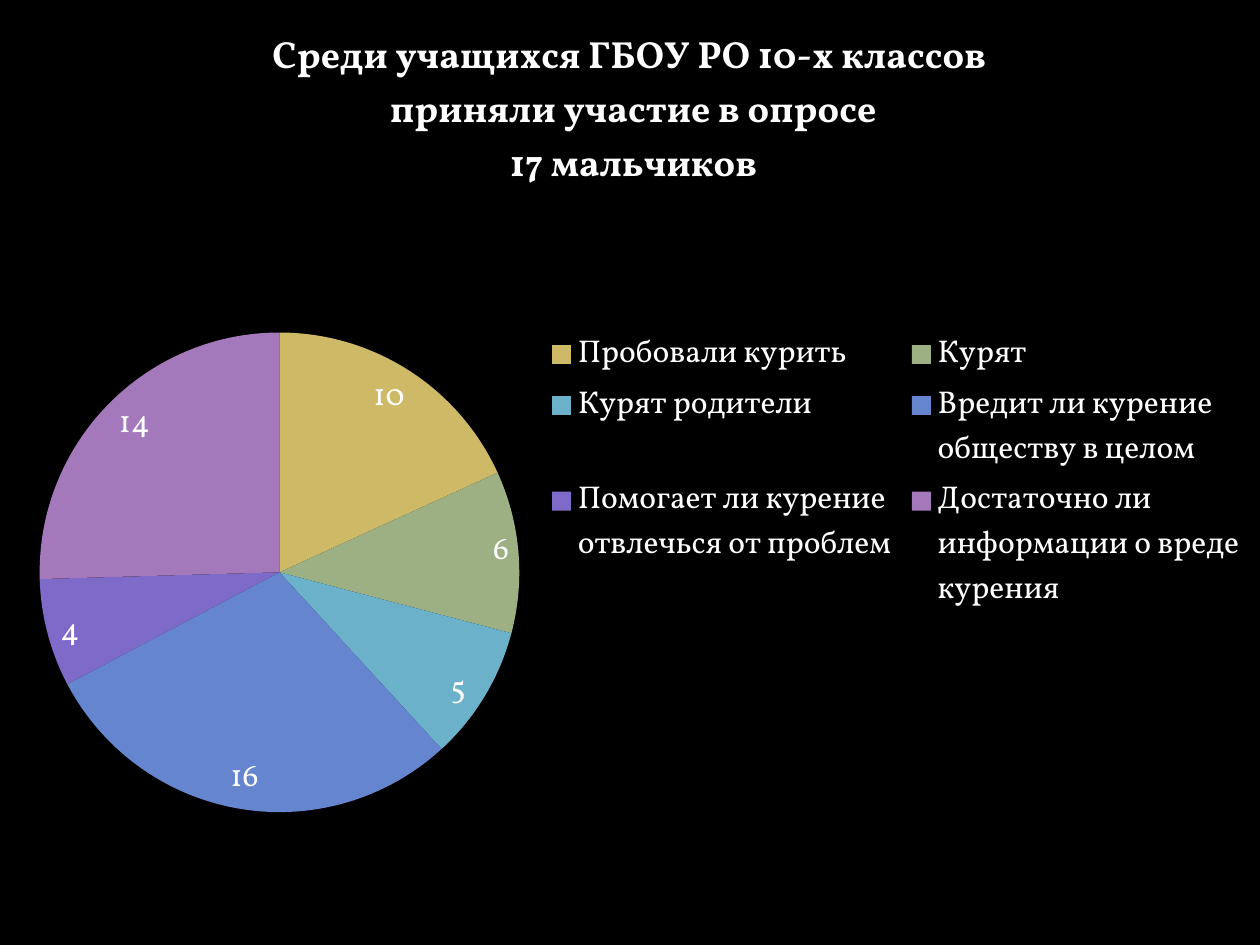
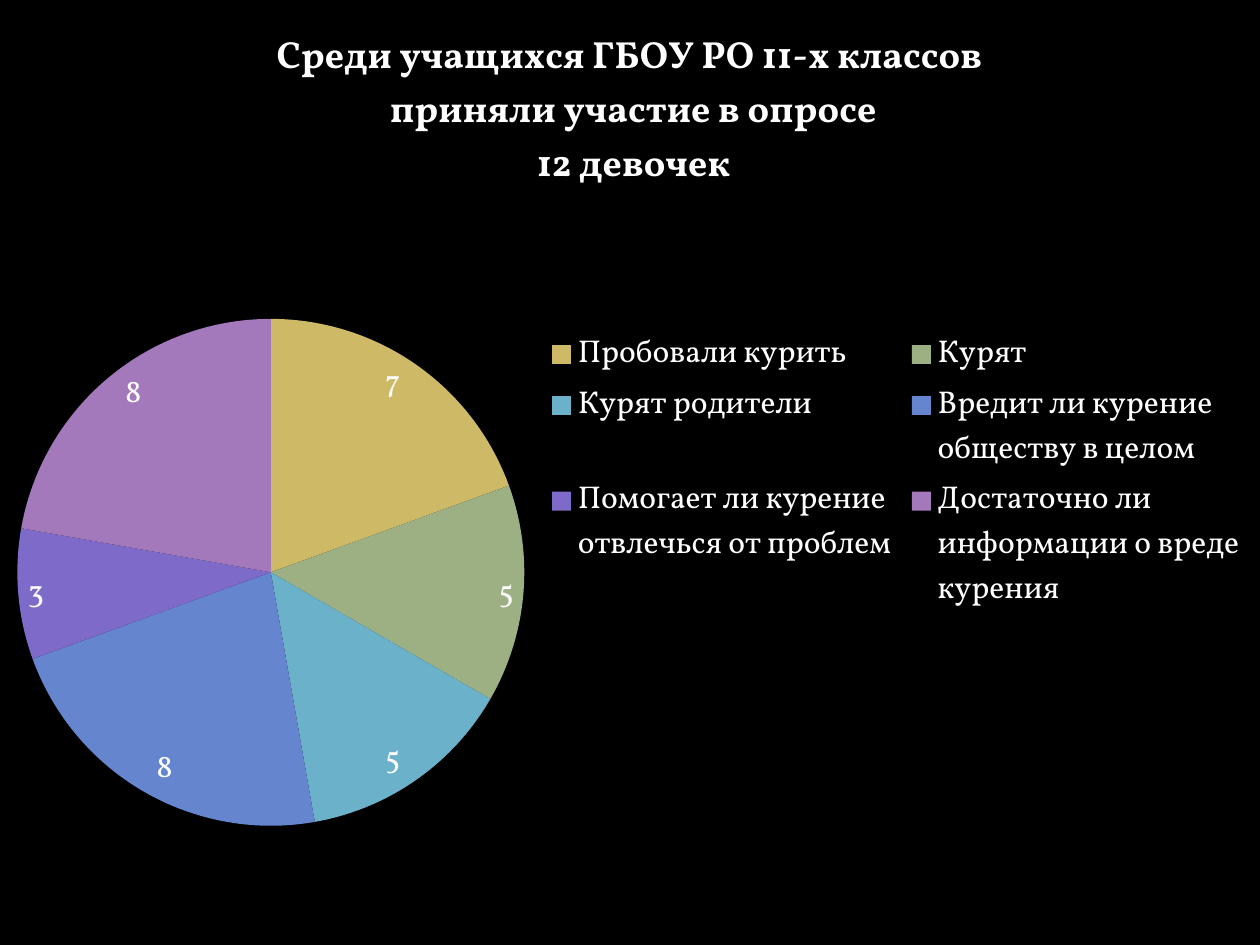
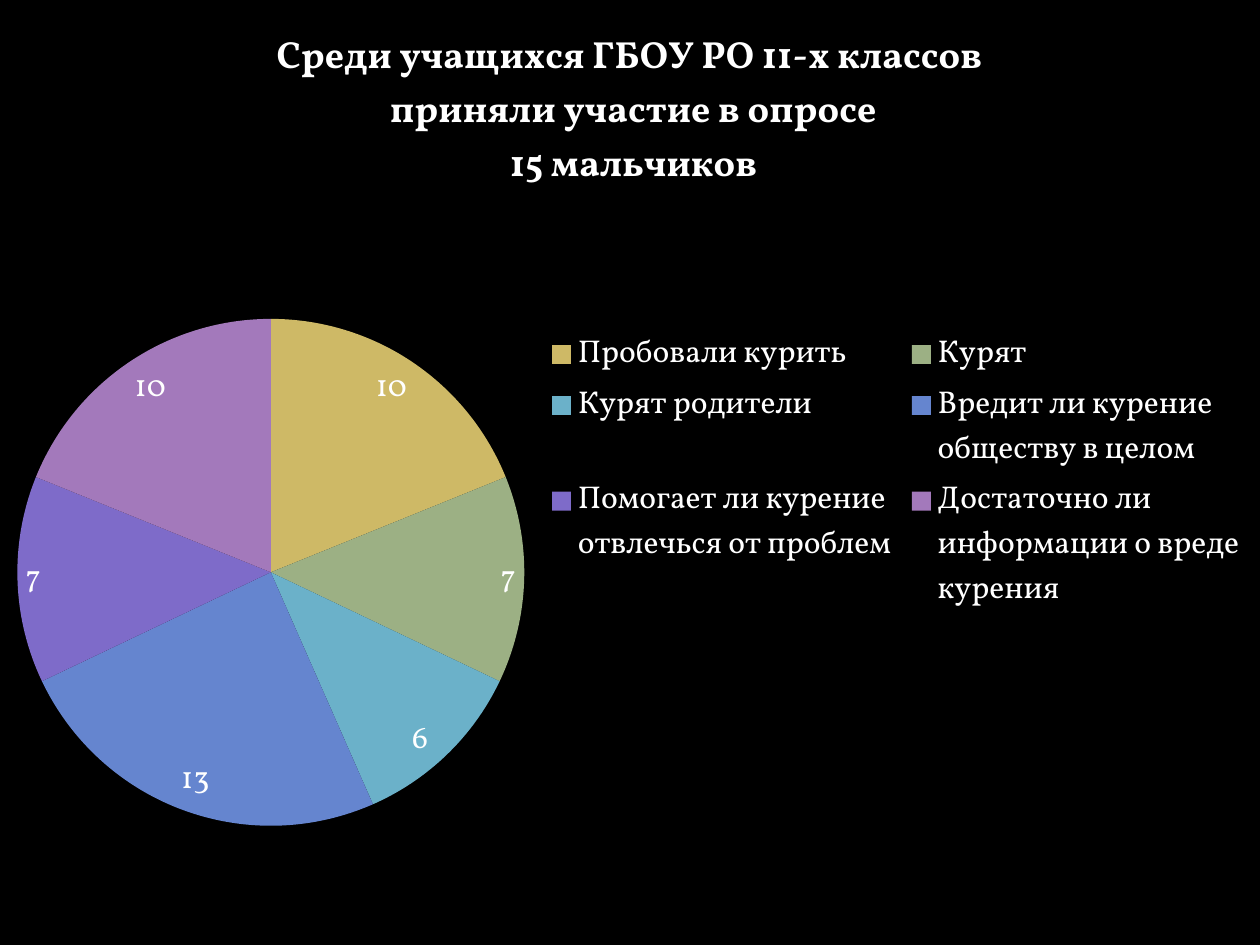
from dataclasses import dataclass

from pptx import Presentation
from pptx.chart.data import CategoryChartData
from pptx.dml.color import RGBColor
from pptx.enum.chart import XL_CHART_TYPE, XL_LABEL_POSITION, XL_LEGEND_POSITION
from pptx.util import Cm, Pt


@dataclass(frozen=True)
class Theme:
    """Colours, font and type sizes shared by the slides."""
    font: str = "Vollkorn"
    background: RGBColor = RGBColor.from_string("000000")
    text: RGBColor = RGBColor.from_string("FFFFFF")
    slices: tuple = ("CEB966", "9CB084", "6BB1C9", "6585CF", "7E6BC9", "A379BB")
    body_size: Pt = Pt(18)
    title_size: Pt = Pt(21.6)


@dataclass(frozen=True)
class Box:
    """A rectangle given by its left, top, width and height."""
    left: int
    top: int
    width: int
    height: int


@dataclass(frozen=True)
class Survey:
    """Answers of one group of pupils."""
    grade: str
    group: str
    answers: tuple


THEME = Theme()
SLIDE = Box(Cm(0), Cm(0), Cm(25.4), Cm(19.05))
QUESTIONS = (
    "Пробовали курить",
    "Курят",
    "Курят родители",
    "Вредит ли курение обществу в целом",
    "Помогает ли курение отвлечься от проблем",
    "Достаточно ли информации о вреде курения",
)
SURVEYS = (
    Survey("10-х", "17 мальчиков", (10, 6, 5, 16, 4, 14)),
    Survey("11-х", "12 девочек", (7, 5, 5, 8, 3, 8)),
    Survey("11-х", "15 мальчиков", (10, 7, 6, 13, 7, 10)),
)


def style_font(font, size, bold=False):
    """Apply the theme's typeface and text colour."""
    font.name = THEME.font
    font.size = size
    font.bold = bold
    font.color.rgb = THEME.text


def add_heading(chart, survey):
    """Write the three centred lines of the chart title."""
    lines = (
        f"Среди учащихся ГБОУ РО {survey.grade} классов",
        " приняли участие в опросе",
        f" {survey.group}",
    )
    tf = chart.chart_title.text_frame
    for i, line in enumerate(lines):
        p = tf.add_paragraph() if i else tf.paragraphs[0]
        p.add_run().text = line
        style_font(p.font, THEME.title_size, bold=True)
    chart.chart_title.include_in_layout = False


def style_pie(chart):
    """Colour the slices and show their values."""
    plot = chart.plots[0]
    plot.vary_by_categories = True
    for i, colour in enumerate(THEME.slices):
        fmt = plot.series[0].points[i].format
        fmt.fill.solid()
        fmt.fill.fore_color.rgb = RGBColor.from_string(colour)
        fmt.line.fill.background()
    plot.has_data_labels = True
    labels = plot.data_labels
    labels.show_value = True
    labels.show_percentage = False
    labels.position = XL_LABEL_POSITION.BEST_FIT
    style_font(labels.font, THEME.body_size)


def add_legend(chart):
    """Show the legend on the right of the pie."""
    chart.has_legend = True
    chart.legend.position = XL_LEGEND_POSITION.RIGHT
    chart.legend.include_in_layout = False
    style_font(chart.legend.font, THEME.body_size)


def add_survey_chart(slide, survey, box):
    """Fill the box with the pie chart of one survey."""
    data = CategoryChartData()
    data.categories = QUESTIONS
    data.add_series("Series 1", survey.answers)
    chart = slide.shapes.add_chart(
        XL_CHART_TYPE.PIE, box.left, box.top, box.width, box.height, data).chart
    style_font(chart.font, THEME.body_size)
    add_heading(chart, survey)
    style_pie(chart)
    add_legend(chart)


def main():
    """Build one slide for each survey."""
    prs = Presentation()
    prs.slide_width, prs.slide_height = SLIDE.width, SLIDE.height
    fill = prs.slide_master.background.fill
    fill.solid()
    fill.fore_color.rgb = THEME.background
    blank = prs.slide_layouts.get_by_name("Blank")
    for survey in SURVEYS:
        add_survey_chart(prs.slides.add_slide(blank), survey, SLIDE)
    prs.save("out.pptx")


if __name__ == "__main__":
    main()
